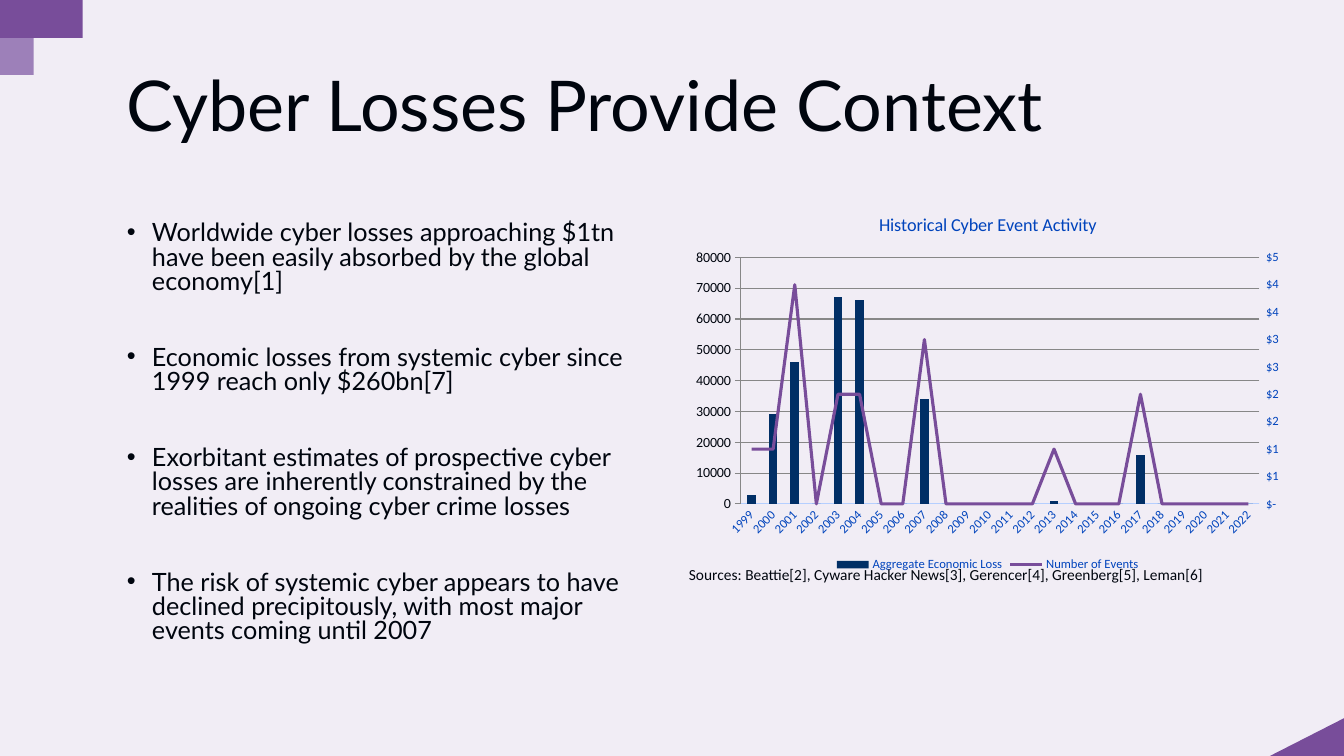
from dataclasses import dataclass

import pptx
import pptx.chart.axis
import pptx.chart.data
import pptx.dml.color
import pptx.enum.chart
import pptx.enum.shapes
import pptx.enum.text
import pptx.oxml
import pptx.oxml.ns
import pptx.util

Pt = pptx.util.Pt
qn = pptx.oxml.ns.qn


@dataclass(frozen=True)
class Theme:
    text_font: str = "Lato"
    chart_font: str = "Calibri"
    background: str = "F1EDF5"
    text: str = "00050E"
    purple: str = "784D9A"
    light_purple: str = "9D80B9"
    navy: str = "012F66"
    label: str = "0043BC"
    grid: str = "B5CFFF"
    title_size: float = 50
    body_size: float = 18
    chart_title_size: float = 13
    source_size: float = 11
    label_size: float = 9


BULLETS = [
    "Worldwide cyber losses approaching $1tn have been easily absorbed by the global economy[1]",
    "Economic losses from systemic cyber since 1999 reach only $260bn[7]",
    "Exorbitant estimates of prospective cyber losses are inherently constrained by the "
    "realities of ongoing cyber crime losses",
    "The risk of systemic cyber appears to have declined precipitously, with most major "
    "events coming until 2007",
]
YEARS = range(1999, 2023)
LOSSES = {1999: 3000, 2000: 29000, 2001: 46000, 2003: 67000, 2004: 66000,
          2007: 34000, 2013: 1000, 2017: 16000}
EVENTS = {1999: 1, 2000: 1, 2001: 4, 2003: 2, 2004: 2, 2007: 3, 2013: 1, 2017: 2}
DOLLARS = r'_("$"* #,##0_);_("$"* \(#,##0\);_("$"* "-"??_);_(@_)'

CHART_NAMESPACE = pptx.oxml.ns.nsdecls("c")
LINE_PLOT = f"""<c:lineChart {CHART_NAMESPACE}><c:grouping val="standard"/><c:varyColors val="0"/>
<c:marker val="1"/><c:axId val="501"/><c:axId val="502"/></c:lineChart>"""
HIDDEN_AXIS = f"""<c:catAx {CHART_NAMESPACE}><c:axId val="501"/>
<c:scaling><c:orientation val="minMax"/></c:scaling><c:delete val="1"/><c:axPos val="b"/>
<c:crossAx val="502"/><c:crosses val="autoZero"/></c:catAx>"""
RIGHT_AXIS = f"""<c:valAx {CHART_NAMESPACE}><c:axId val="502"/>
<c:scaling><c:orientation val="minMax"/></c:scaling><c:delete val="0"/><c:axPos val="r"/>
<c:numFmt formatCode="General" sourceLinked="0"/><c:majorTickMark val="out"/>
<c:minorTickMark val="none"/><c:tickLblPos val="nextTo"/><c:crossAx val="501"/>
<c:crosses val="max"/><c:crossBetween val="between"/></c:valAx>"""
PLOT_LAYOUT = f"""<c:layout {CHART_NAMESPACE}><c:manualLayout><c:layoutTarget val="inner"/>
<c:xMode val="edge"/><c:yMode val="edge"/><c:x val="0.1"/><c:y val="0.16"/>
<c:w val="0.84"/><c:h val="0.65"/></c:manualLayout></c:layout>"""


def color(value):
    return pptx.dml.color.RGBColor.from_string(value)


def set_font(font, name, size, value):
    font.name, font.size, font.bold = name, Pt(size), False
    font.color.rgb = color(value)


class SlideBuilder:
    def __init__(self, slide, theme):
        self.slide, self.theme = slide, theme
        slide.background.fill.solid()
        slide.background.fill.fore_color.rgb = color(theme.background)

    def fill(self, shape, value):
        shape.shadow.inherit = False
        shape.fill.solid()
        shape.fill.fore_color.rgb = color(value)
        shape.line.fill.background()

    def rectangle(self, box, value):
        kind = pptx.enum.shapes.MSO_SHAPE.RECTANGLE
        self.fill(self.slide.shapes.add_shape(kind, *map(Pt, box)), value)

    def polygon(self, points, value):
        start, *rest = [(Pt(x), Pt(y)) for x, y in points]
        builder = self.slide.shapes.build_freeform(*start)
        builder.add_line_segments(rest, close=True)
        self.fill(builder.convert_to_shape(), value)

    def text(self, box, paragraphs, font, size, line_spacing=1.0, gap=0, bullet_indent=0):
        """Add a text box; gap is the space between paragraphs, in points."""
        frame = self.slide.shapes.add_textbox(*map(Pt, box)).text_frame
        frame.word_wrap = True
        frame.vertical_anchor = pptx.enum.text.MSO_ANCHOR.TOP
        for index, content in enumerate(paragraphs):
            paragraph = frame.add_paragraph() if index else frame.paragraphs[0]
            paragraph.text = content
            paragraph.line_spacing = line_spacing
            paragraph.space_before = Pt(gap if index else 0)
            if bullet_indent:
                properties = paragraph._p.get_or_add_pPr()
                properties.set("marL", str(Pt(bullet_indent)))
                properties.set("indent", str(-Pt(bullet_indent)))
                namespace = pptx.oxml.ns.nsdecls("a")
                for tag in ('buFont typeface="Arial"', 'buChar char="•"'):
                    properties.append(pptx.oxml.parse_xml(f"<a:{tag} {namespace}/>"))
            set_font(paragraph.font, font, size, self.theme.text)

    def label_font(self, font, size=None):
        set_font(font, self.theme.chart_font, size or self.theme.label_size, self.theme.label)

    def chart(self, box, title, bar_name, bars, line_name, lines):
        """Add columns on the left axis and a line on the right axis."""
        theme = self.theme
        data = pptx.chart.data.CategoryChartData()
        data.categories = [str(year) for year in YEARS]
        for name, values in ((bar_name, bars), (line_name, lines)):
            data.add_series(name, [values.get(year, 0) for year in YEARS])
        kind = pptx.enum.chart.XL_CHART_TYPE.COLUMN_CLUSTERED
        chart = self.slide.shapes.add_chart(kind, *map(Pt, box), data).chart
        set_font(chart.font, theme.chart_font, 10, theme.text)

        chart.has_title = True
        heading = chart.chart_title.text_frame.paragraphs[0]
        heading.text = title
        self.label_font(heading.font, theme.chart_title_size)
        chart.has_legend = True
        chart.legend.position = pptx.enum.chart.XL_LEGEND_POSITION.BOTTOM
        chart.legend.include_in_layout = False
        self.label_font(chart.legend.font)

        right_axis = self.move_last_series_to_right(chart)
        self.style_axes(chart, right_axis)

        bar_plot, line_plot = chart.plots
        bar_plot.vary_by_categories = False
        bar_plot.gap_width = 150
        bar_fill = bar_plot.series[0].format.fill
        bar_fill.solid()
        bar_fill.fore_color.rgb = color(theme.navy)
        series = line_plot.series[0]
        series.smooth = False
        series.marker.style = pptx.enum.chart.XL_MARKER_STYLE.NONE
        series.format.line.color.rgb = color(theme.purple)
        series.format.line.width = Pt(2.25)

    def move_last_series_to_right(self, chart):
        plot_area = chart._chartSpace.chart.plotArea
        for layout in plot_area.findall(qn("c:layout")):
            plot_area.remove(layout)
        plot_area.insert(0, pptx.oxml.parse_xml(PLOT_LAYOUT))
        bar_plot = plot_area.find(qn("c:barChart"))
        line_plot = pptx.oxml.parse_xml(LINE_PLOT)
        series = bar_plot.findall(qn("c:ser"))[-1]
        for bar_only in series.findall(qn("c:invertIfNegative")):
            series.remove(bar_only)
        line_plot.insert(2, series)
        bar_plot.addnext(line_plot)
        hidden_axis = pptx.oxml.parse_xml(HIDDEN_AXIS)
        right_axis = pptx.oxml.parse_xml(RIGHT_AXIS)
        plot_area.find(qn("c:valAx")).addnext(hidden_axis)
        hidden_axis.addnext(right_axis)
        return pptx.chart.axis.ValueAxis(right_axis)

    def style_axes(self, chart, right_axis):
        years, dollars = chart.category_axis, chart.value_axis
        for axis in (years, dollars, right_axis):
            self.label_font(axis.tick_labels.font)
        for axis in (years, dollars):
            axis.major_tick_mark = pptx.enum.chart.XL_TICK_MARK.NONE
        for axis, maximum, step in ((dollars, 80000, 10000), (right_axis, 4.5, 0.5)):
            axis.minimum_scale, axis.maximum_scale, axis.major_unit = 0, maximum, step
            axis.format.line.fill.background()
        dollars.has_major_gridlines = True
        for line in (years.format.line, dollars.major_gridlines.format.line):
            line.color.rgb = color(self.theme.grid)
            line.width = Pt(0.75)
        dollars.tick_labels.number_format = DOLLARS
        dollars.tick_labels.number_format_is_linked = False
        years._element.find(qn("c:txPr")).find(qn("a:bodyPr")).set("rot", "-2700000")


def main():
    presentation = pptx.Presentation()
    presentation.slide_width, presentation.slide_height = Pt(960), Pt(540)
    theme = Theme()
    builder = SlideBuilder(presentation.slides.add_slide(presentation.slide_layouts[6]), theme)
    builder.polygon([(907, 540), (960, 513), (960, 540)], theme.purple)
    builder.rectangle((0, 27, 24, 26.5), theme.light_purple)
    builder.rectangle((0, 0, 59, 27), theme.purple)
    builder.text((83.5, 155.5, 396, 340), BULLETS, theme.text_font, theme.body_size, 0.8, 37, 18)
    builder.text((83.5, 47, 721, 51), ["Cyber Losses Provide Context"],
                 theme.text_font, theme.title_size, 0.9)
    builder.chart((485, 140.5, 441, 271), "Historical Cyber Event Activity",
                  "Aggregate Economic Loss", LOSSES, "Number of Events", EVENTS)
    sources = "Sources: Beattie[2], Cyware Hacker News[3], Gerencer[4], Greenberg[5], Leman[6]"
    builder.text((485, 400, 403, 21), [sources], theme.chart_font, theme.source_size)
    presentation.save("out.pptx")


if __name__ == "__main__":
    main()
